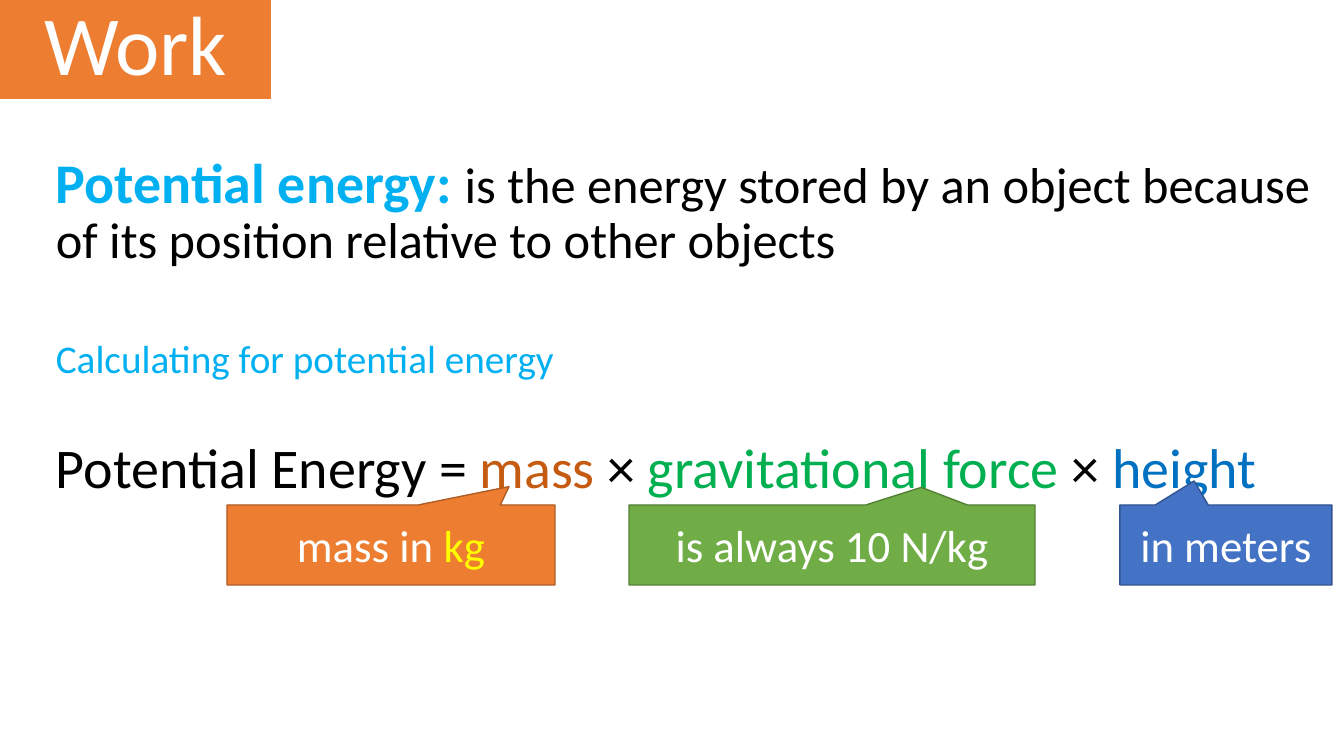
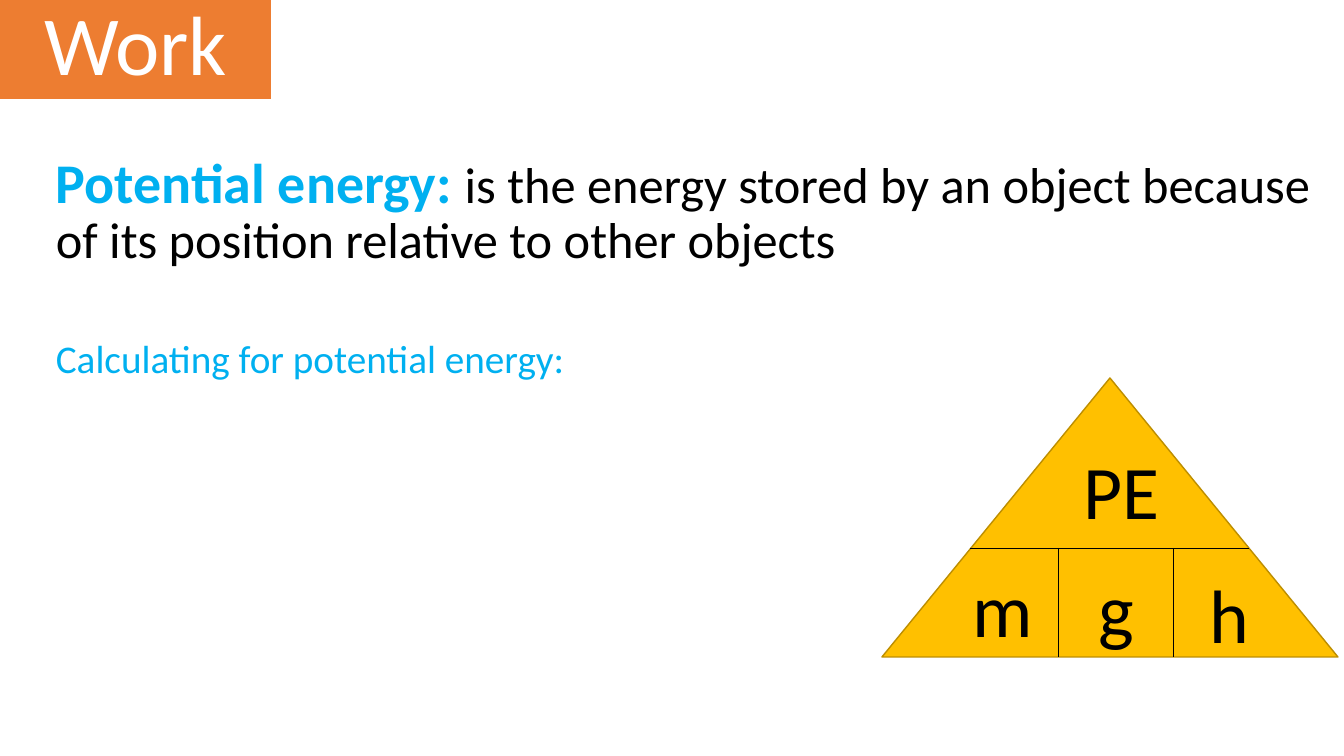
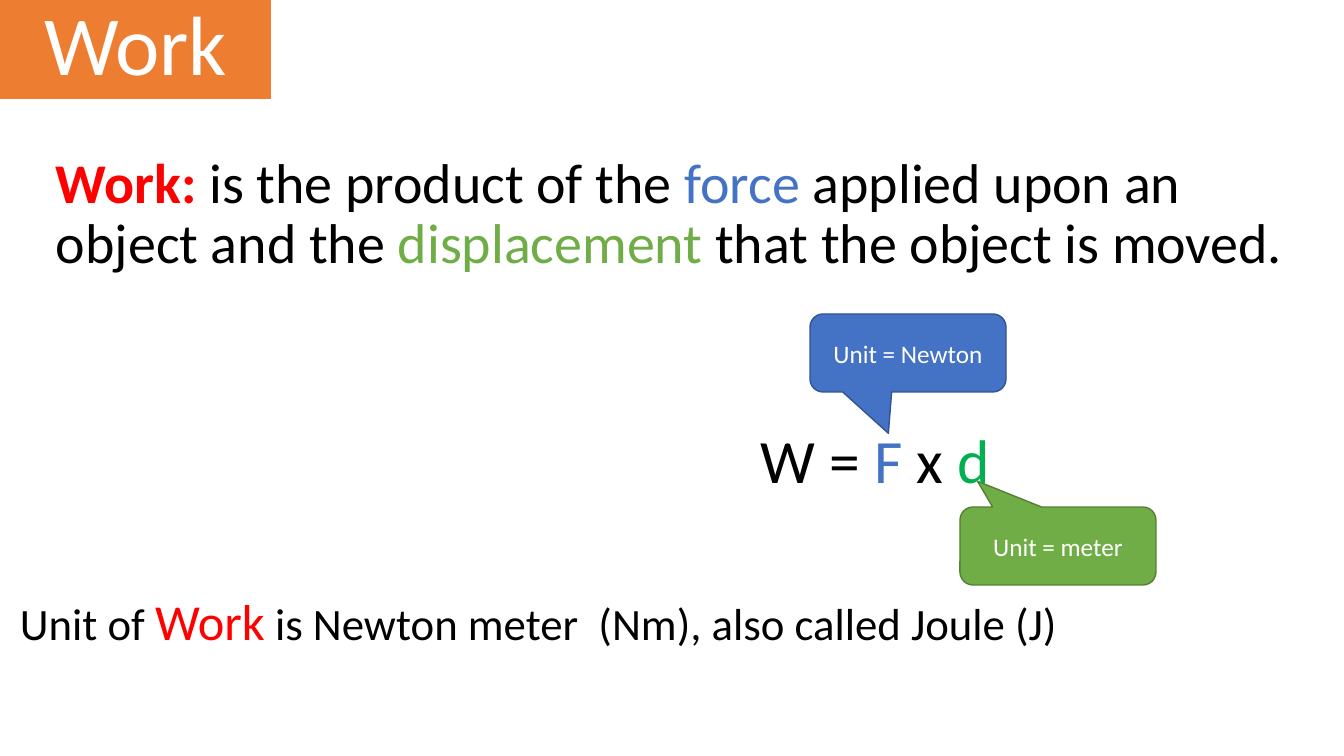
from lxml.etree import SubElement
from pptx import Presentation
from pptx.dml.color import RGBColor
from pptx.enum.shapes import MSO_CONNECTOR, MSO_SHAPE as Kind
from pptx.enum.text import MSO_ANCHOR as Anchor, PP_ALIGN as Align
from pptx.oxml.ns import qn
from pptx.util import Pt

PX = 914400 / 100.8
FONT = "Calibri"

WHITE = RGBColor(0xFF, 0xFF, 0xFF)
BLACK = RGBColor(0x00, 0x00, 0x00)
RED = RGBColor(0xFF, 0x00, 0x00)
YELLOW = RGBColor(0xFF, 0xFF, 0x00)
SKY = RGBColor(0x00, 0xB0, 0xF0)
RUST = RGBColor(0xC5, 0x5A, 0x11)
EMERALD = RGBColor(0x00, 0xB0, 0x50)
AZURE = RGBColor(0x00, 0x70, 0xC0)
ORANGE = RGBColor(0xED, 0x7D, 0x31)
ORANGE_EDGE = RGBColor(0xAF, 0x5C, 0x24)
GREEN = RGBColor(0x70, 0xAD, 0x47)
GREEN_EDGE = RGBColor(0x53, 0x80, 0x35)
BLUE = RGBColor(0x44, 0x72, 0xC4)
BLUE_EDGE = RGBColor(0x32, 0x54, 0x91)
GOLD = RGBColor(0xFF, 0xC0, 0x00)
GOLD_EDGE = RGBColor(0xBD, 0x8E, 0x00)


def emu(*lengths):
    return [round(length * PX) for length in lengths]


def write(shape, paragraphs, align=Align.LEFT, anchor=Anchor.TOP, spacing=1.0):
    """Fill a shape with (points before, runs); a run is (text, size, colour, bold)."""
    frame = shape.text_frame
    frame.word_wrap = True
    frame.vertical_anchor = anchor
    for index, (before, runs) in enumerate(paragraphs):
        paragraph = frame.paragraphs[0] if index == 0 else frame.add_paragraph()
        layout = {"alignment": align, "line_spacing": spacing, "space_before": Pt(before)}
        for key, value in layout.items():
            setattr(paragraph, key, value)
        for text, size, color, *bold in runs:
            run = paragraph.add_run()
            run.text = text
            run.font.color.rgb = color
            for key, value in {"name": FONT, "size": Pt(size), "bold": bool(bold)}.items():
                setattr(run.font, key, value)


deck = Presentation()
deck.slide_width, deck.slide_height = emu(1344, 756)

# Title band and body text of every slide
energy_definition = (10, [
    ("Potential energy: ", 40, SKY, True),
    ("is the energy stored by an object because of its position relative to other objects",
     36, BLACK),
])
energy_formula = (41, [
    ("Potential Energy = ", 40, BLACK), ("mass", 40, RUST), (" × ", 40, BLACK),
    ("gravitational force ", 40, EMERALD), ("× ", 40, BLACK), ("height", 40, AZURE),
])
work_definition = (10, [
    ("Work: ", 40, RED, True), ("is the product of the ", 40, BLACK), ("force", 40, BLUE),
    (" applied upon an object and the ", 40, BLACK), ("displacement", 40, GREEN),
    (" that the object is moved.", 40, BLACK),
])
bodies = [
    [energy_definition, (50, [("Calculating for potential energy", 28, SKY)]), energy_formula],
    [energy_definition, (50, [("Calculating for potential energy:", 28, SKY)])],
    [work_definition],
]
slides = []
for body in bodies:
    slide = deck.slides.add_slide(deck.slide_layouts[6])
    slides.append(slide)
    title = slide.shapes.add_textbox(*emu(0, -2, 271, 101))
    title.fill.solid()
    title.fill.fore_color.rgb = ORANGE
    write(title, [(0, [("Work", 60, WHITE)])], Align.CENTER, Anchor.BOTTOM, 0.9)
    write(slide.shapes.add_textbox(*emu(46, 150, 1276, 573)), body, spacing=0.9)
formula_slide, triangle_slide, work_slide = slides

# Callouts on the formulas, and the formula triangle
RECT, ROUND = Kind.RECTANGULAR_CALLOUT, Kind.ROUNDED_RECTANGULAR_CALLOUT
blocks = [
    (formula_slide, RECT, (227, 505, 328, 80), (0.36, -0.73), ORANGE, ORANGE_EDGE,
     [("mass in ", 32, WHITE), ("kg", 32, YELLOW)]),
    (formula_slide, RECT, (629, 505, 406, 80), (0.22, -0.72), GREEN, GREEN_EDGE,
     [("is always 10 N/kg", 32, WHITE)]),
    (formula_slide, RECT, (1120, 505, 212, 80), (-0.15, -0.8), BLUE, BLUE_EDGE,
     [("in meters", 32, WHITE)]),
    (triangle_slide, Kind.ISOSCELES_TRIANGLE, (882, 378, 456, 279), (), GOLD, GOLD_EDGE, []),
    (work_slide, ROUND, (810, 314, 196, 78), (-0.1, 1.03), BLUE, BLUE_EDGE,
     [("Unit = Newton", 18, WHITE)]),
    (work_slide, ROUND, (960, 507, 196, 78), (-0.41, -0.83), GREEN, GREEN_EDGE,
     [("Unit = meter", 18, WHITE)]),
]
for slide, kind, box, tip, fill, edge, runs in blocks:
    block = slide.shapes.add_shape(kind, *emu(*box))
    block.shadow.inherit = False
    block.fill.solid()
    block.fill.fore_color.rgb = fill
    block.line.color.rgb = edge
    block.line.width = Pt(1)
    for index, offset in enumerate(tip):
        block.adjustments[index] = offset
    write(block, [(0, runs)], Align.CENTER, Anchor.MIDDLE)

# Dividers and letters of the triangle
for ends in [(970, 548, 1249, 548), (1058, 548, 1058, 657), (1173, 548, 1173, 657)]:
    divider = triangle_slide.shapes.add_connector(MSO_CONNECTOR.STRAIGHT, *emu(*ends))
    divider.line.color.rgb = BLACK
    divider.line.width = Pt(0.5)
    SubElement(divider._element.spPr, qn("a:effectLst"))

for letter, left, top, align in [
    ("PE", 1074, 439, Align.LEFT),
    ("m", 953, 557, Align.CENTER),
    ("g", 1067, 557, Align.CENTER),
    ("h", 1200, 563, Align.LEFT),
]:
    label = triangle_slide.shapes.add_textbox(*emu(left, top, 99, 91))
    write(label, [(0, [(letter, 54, BLACK)])], align)

# Work equation and its unit
equation = work_slide.shapes.add_textbox(*emu(751, 417, 300, 85))
write(equation, [(0, [("W = ", 44, BLACK), ("F", 44, BLUE), (" x ", 44, BLACK),
                      ("d", 44, EMERALD)])])
unit = work_slide.shapes.add_textbox(*emu(10, 585, 1213, 72))
write(unit, [(0, [("Unit of ", 32, BLACK), ("Work", 36, RED),
                  (" is Newton meter  (Nm), also called Joule (J)", 32, BLACK)])])

deck.save("out.pptx")
